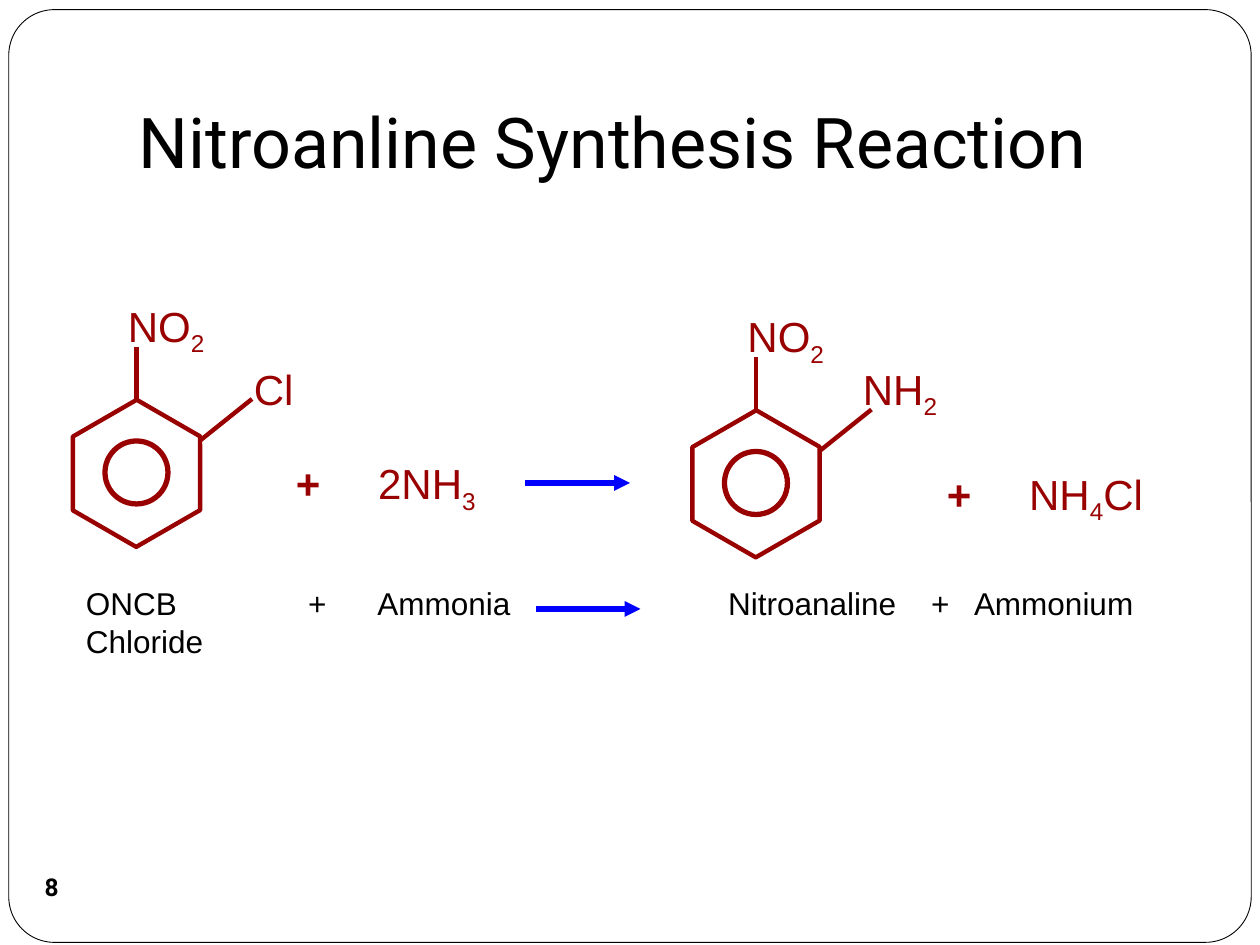
from pptx import Presentation
from pptx.dml.color import RGBColor
from pptx.enum.shapes import MSO_CONNECTOR, MSO_SHAPE
from pptx.enum.text import MSO_ANCHOR, MSO_AUTO_SIZE, PP_ALIGN
from pptx.oxml.ns import qn
from pptx.util import Pt
from lxml import etree

BLACK, WHITE, RED, BLUE = "000000", "FFFFFF", "990000", "0000FF"


def color(value):
    return RGBColor.from_string(value)


def write(shape, *pieces, size=24, font="Arial", ink=RED, align=PP_ALIGN.LEFT,
          anchor=MSO_ANCHOR.TOP, margins=(7.2, 3.6, 7.2, 3.6), wrap=True, tabs=()):
    """Write pieces, each a string or (string, {"bold", "baseline"}), as one paragraph."""
    frame = shape.text_frame
    frame.auto_size = MSO_AUTO_SIZE.NONE
    frame.word_wrap = wrap
    frame.vertical_anchor = anchor
    (frame.margin_left, frame.margin_top,
     frame.margin_right, frame.margin_bottom) = map(Pt, margins)
    paragraph = frame.paragraphs[0]
    paragraph.alignment = align
    if tabs:
        tab_list = etree.SubElement(paragraph._p.get_or_add_pPr(), qn("a:tabLst"))
        for position in tabs:
            etree.SubElement(tab_list, qn("a:tab"), pos=str(Pt(position)), algn="l")
    for piece in pieces:
        text, style = (piece, {}) if isinstance(piece, str) else piece
        run = paragraph.add_run()
        run.text = text
        run.font.name, run.font.size = font, Pt(size)
        run.font.color.rgb = color(ink)
        run.font.bold = style.get("bold", False)
        if "baseline" in style:
            run._r.get_or_add_rPr().set("baseline", str(style["baseline"]))


def sub(text):
    return text, {"baseline": -25000}


def add_text(slide, left, top, width, height, *pieces, **style):
    shape = slide.shapes.add_textbox(Pt(left), Pt(top), Pt(width), Pt(height))
    write(shape, *pieces, **style)


def add_shape(slide, kind, left, top, width, height, line=None, weight=1, fill=None):
    shape = slide.shapes.add_shape(kind, Pt(left), Pt(top), Pt(width), Pt(height))
    shape.shadow.inherit = False
    if fill:
        shape.fill.solid()
        shape.fill.fore_color.rgb = color(fill)
    else:
        shape.fill.background()
    if line:
        shape.line.color.rgb = color(line)
        shape.line.width = Pt(weight)
    else:
        shape.line.fill.background()
    return shape


def add_line(slide, x1, y1, x2, y2, ink=RED, weight=2.5, arrow=False):
    connector = slide.shapes.add_connector(
        MSO_CONNECTOR.STRAIGHT, Pt(x1), Pt(y1), Pt(x2), Pt(y2))
    connector.line.color.rgb = color(ink)
    connector.line.width = Pt(weight)
    properties = connector.element.spPr
    if arrow:
        etree.SubElement(properties.find(qn("a:ln")), qn("a:tailEnd"), type="triangle")
    etree.SubElement(properties, qn("a:effectLst"))


def add_header(slide, left, top, width, height):
    title = slide.shapes.title
    title.left, title.top, title.width, title.height = map(Pt, (left, top, width, height))
    write(title, "Nitroanline Synthesis Reaction", size=40, font="Roboto", ink=BLACK,
          anchor=MSO_ANCHOR.BOTTOM, margins=(7.2, 3.6, 7.2, 7.2))


def add_frame(slide, left, top, width, height):
    frame = add_shape(slide, MSO_SHAPE.ROUNDED_RECTANGLE, left, top, width, height,
                      BLACK, 0.5, WHITE)
    frame.adjustments[0] = 0.049
    # The frame lies behind the title
    slide.shapes.title.element.addprevious(frame.element)


def add_page_number(slide, left, top, size):
    badge = add_shape(slide, MSO_SHAPE.OVAL, left, top, size, size)
    write(badge, ("8", {"bold": True}), size=14, font="Roboto", ink=BLACK,
          align=PP_ALIGN.CENTER, anchor=MSO_ANCHOR.MIDDLE, margins=(0, 0, 0, 0), wrap=False)


def add_molecule(slide, left, top, group, group_left):
    """Draw a benzene ring with a nitro group above and another group at its right."""
    ring = add_shape(slide, MSO_SHAPE.HEXAGON, left, top, 84, 73, RED, 2.5)
    ring.adjustments[0] = 0.289
    ring.rotation = 30
    add_shape(slide, MSO_SHAPE.OVAL, left + 24, top + 18, 36, 36, RED, 3)
    # Bonds
    add_line(slide, left + 42, top - 6, left + 42, top - 36)
    add_line(slide, left + 78, top + 18, left + 108, top - 6)
    # Groups
    add_text(slide, left + 30, top - 66, 60, 37, "NO", sub("2"), wrap=False)
    add_text(slide, group_left, 204, 58, 37, *group, wrap=False)


def add_term(slide, left, top, width, *formula):
    add_text(slide, left, top, width, 37, ("+\t", {"bold": True}), *formula, tabs=[47])


def add_arrow(slide, left, top):
    add_line(slide, left, top, left + 60, top, BLUE, 3, arrow=True)


def add_names(slide, left, top, width, height):
    add_text(slide, left, top, width, height,
             "ONCB\t+\tAmmonia\tNitroanaline\t+\tAmmonium Chloride",
             size=18, ink=BLACK, tabs=[127, 166.5, 367, 483, 507.5])


def main():
    presentation = Presentation()
    presentation.slide_width, presentation.slide_height = Pt(720), Pt(540)
    slide = presentation.slides.add_slide(presentation.slide_layouts[5])

    add_frame(slide, 5, 5.5, 710, 533)
    add_header(slide, 72, 21.6, 612, 90)
    add_page_number(slide, 11.5, 489, 36)

    # Reaction in formulas
    add_molecule(slide, 36, 234, ["Cl"], 138)
    add_term(slide, 162, 258, 120, "2NH", sub("3"))
    add_arrow(slide, 300, 276)
    add_molecule(slide, 390, 240, ["NH", sub("2")], 486)
    add_term(slide, 534, 264, 130, "NH", sub("4"), "Cl")

    # Reaction in words
    add_names(slide, 42, 330, 641.5, 51)
    add_arrow(slide, 306, 348)

    presentation.save("out.pptx")


if __name__ == "__main__":
    main()
